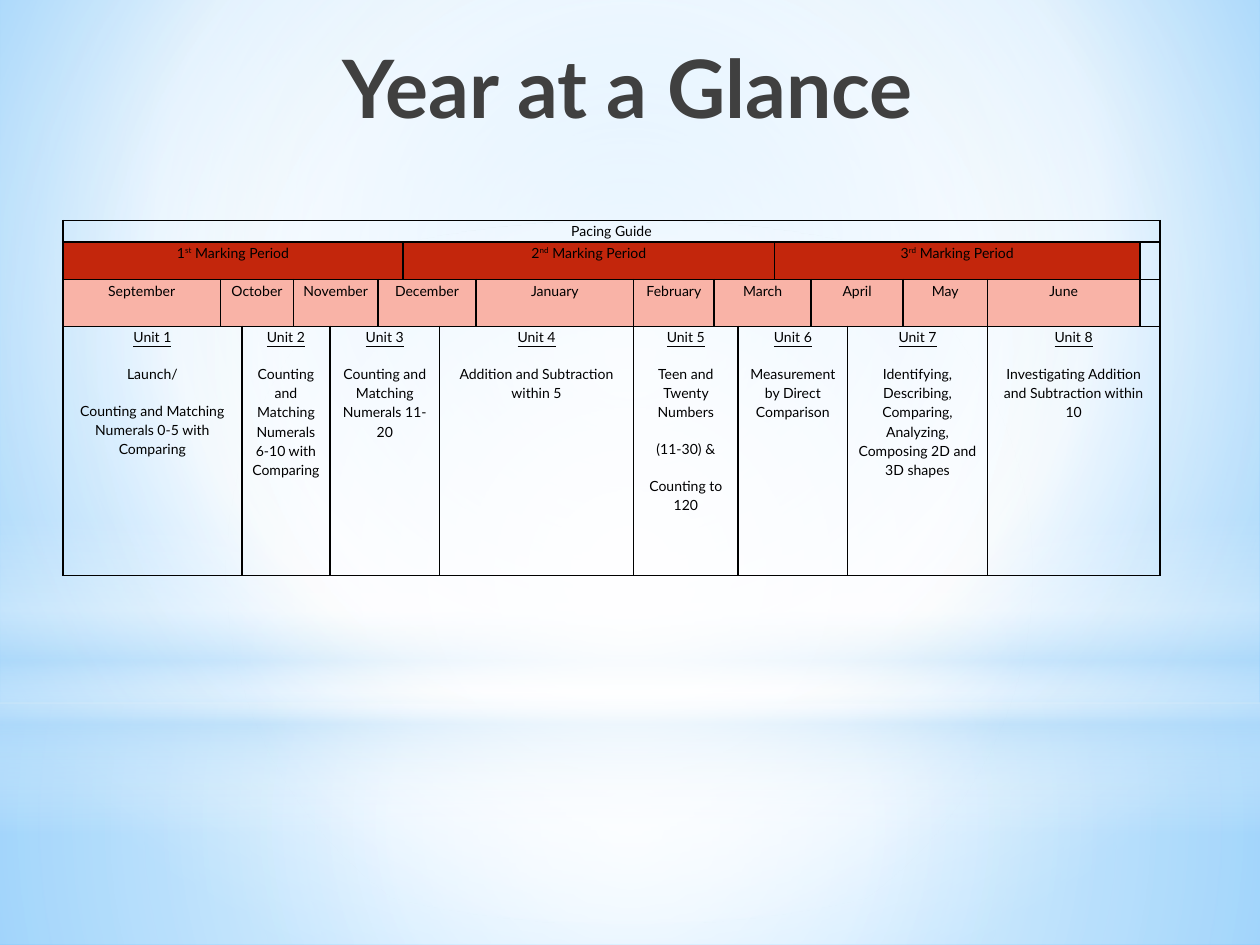
"""Build the "Year at a Glance" slide with its pacing guide table."""
from lxml.etree import SubElement
from pptx import Presentation
from pptx.dml.color import RGBColor
from pptx.enum.shapes import MSO_SHAPE as Shape
from pptx.enum.text import MSO_ANCHOR as Anchor, MSO_AUTO_SIZE as AutoSize, PP_ALIGN as Align
from pptx.oxml.ns import qn
from pptx.util import Inches, Pt


def gradient(parent, stops, center=None):
    """Replace the empty fill of parent with a radial or a vertical gradient."""
    old = parent.find(qn("a:noFill"))
    grad = SubElement(parent, qn("a:gradFill"), rotWithShape="1")
    parent.replace(old, grad)
    stop_list = SubElement(grad, qn("a:gsLst"))
    for position, color, opacity in stops:
        stop = SubElement(stop_list, qn("a:gs"), pos=str(position * 1000))
        tone = SubElement(stop, qn("a:srgbClr"), val=color)
        if opacity < 100:
            SubElement(tone, qn("a:alpha"), val=str(opacity * 1000))
    if center:
        radial = SubElement(grad, qn("a:path"), path="circle")
        sides = {side: str(share * 1000) for side, share in zip("ltrb", center)}
        SubElement(radial, qn("a:fillToRect"), sides)
    else:
        SubElement(grad, qn("a:lin"), ang="5400000", scaled="0")


def write(para, text, size, color, **style):
    """Add one centred run in the slide's font."""
    para.alignment = Align.CENTER
    span = para.add_run()
    span.text = text
    span.font.name = "Lato"
    span.font.size = Pt(size)
    span.font.color.rgb = RGBColor.from_string(color)
    for name, value in style.items():
        setattr(span.font, name, value)
    return span


WHITE, SKY, BLACK = "FFFFFF", "B4DCFA", "000000"
RED, PINK = "C3260C", "F9B3A7"
MIDDLE = (50, 50, 50, 50)

deck = Presentation()
deck.slide_width, deck.slide_height = Inches(10), Inches(7.5)
page = deck.slides.add_slide(deck.slide_layouts[5])

page.background.fill.background()
gradient(page.element.find(".//" + qn("p:bgPr")),
         [(0, "9ED5FF", 100), (60, WHITE, 100), (100, "5BB9FF", 100)], (20, 10, 20, 60))
page_fill = page.element.find(".//" + qn("p:bgPr"))
page_fill.insert(0, page_fill.find(qn("a:gradFill")))

glows = [
    (Shape.RECTANGLE, 5.58, 1.92, [(0, WHITE, 91), (37, WHITE, 76), (100, SKY, 79)], MIDDLE),
    (Shape.RECTANGLE, 0, 5.58, [(0, WHITE, 89), (48, WHITE, 62), (100, SKY, 79)], MIDDLE),
    (Shape.RECTANGLE, 4.12, 2.5, [(0, WHITE, 0), (29, WHITE, 30), (45, SKY, 40),
                                  (55, WHITE, 26), (65, SKY, 60), (100, WHITE, 0)], None),
    (Shape.OVAL, 1.75, 5.58, [(0, WHITE, 100), (56, WHITE, 0)], MIDDLE),
]
for kind, top, height, stops, center in glows:
    glow = page.shapes.add_shape(kind, 0, Inches(top), deck.slide_width, Inches(height))
    glow.shadow.inherit = False
    glow.line.fill.background()
    glow.fill.background()
    gradient(glow.element.spPr, stops, center)

title = page.shapes.title
title.left, title.top, title.width, title.height = map(Inches, (1.42, 0.25, 7.12, 1.25))
title.text_frame.auto_size = AutoSize.NONE
title.text_frame.vertical_anchor = Anchor.TOP
write(title.text_frame.paragraphs[0], "Year at a Glance", 46, "404040", bold=True)
glow.element.addnext(title.element)

columns = [1.25, 0.17, 0.41, 0.29, 0.38, 0.2, 0.29, 0.29, 1.25,
           0.64, 0.19, 0.29, 0.29, 0.29, 0.44, 0.67, 1.21, 0.15]
heights = [0.17, 0.3, 0.37, 1.98]
periods = [("1", "st", 6), ("2", "nd", 6), ("3", "rd", 5)]
months = [("September", 1), ("October", 2), ("November", 2), ("December", 3), ("January", 1),
          ("February", 1), ("March", 3), ("April", 2), ("May", 1), ("June", 1)]
units = [
    (["Launch/", "Counting and Matching Numerals 0-5 with Comparing"], 2),
    (["Counting and Matching Numerals 6-10 with Comparing"], 2),
    (["Counting and Matching Numerals 11-20"], 3),
    (["Addition and Subtraction within 5"], 2),
    (["Teen and Twenty Numbers", "(11-30) &", "Counting to 120"], 2),
    (["Measurement by Direct Comparison"], 3),
    (["Identifying, Describing, Comparing, Analyzing, Composing 2D and 3D shapes"], 2),
    (["Investigating Addition and Subtraction within 10"], 2),
]
rows = [
    [([["Pacing Guide"]], 18, None)],
    [([[number, ending, " Marking Period"]], width, RED) for number, ending, width in periods]
    + [([], 1, None)],
    [([[month]], width, PINK) for month, width in months] + [([], 1, None)],
    [([[f"Unit {number}"]] + [[topic] for topic in topics], width, None)
     for number, (topics, width) in enumerate(units, 1)],
]

table = page.shapes.add_table(len(heights), len(columns), Inches(0.5), Inches(1.75),
                              Inches(sum(columns)), Inches(sum(heights))).table
table.first_row = table.horz_banding = False
for column, width in zip(table.columns, columns):
    column.width = Inches(width)
for row, height in zip(table.rows, heights):
    row.height = Inches(height)

for cell in table.iter_cells():
    cell.margin_left = cell.margin_right = Inches(0.06)
    cell.margin_top = cell.margin_bottom = 0
    cell.text_frame.paragraphs[0].font.size = Pt(8)
    borders = cell._tc.get_or_add_tcPr()
    for side in ("lnL", "lnR", "lnT", "lnB"):
        line = SubElement(borders, qn(f"a:{side}"), w=str(Pt(1)))
        SubElement(SubElement(line, qn("a:solidFill")), qn("a:srgbClr"), val=BLACK)
    cell.fill.background()

for row_index, row in enumerate(rows):
    start = 0
    for paragraphs, width, color in row:
        cell = table.cell(row_index, start)
        if width > 1:
            cell.merge(table.cell(row_index, start + width - 1))
        start += width
        if color:
            cell.fill.solid()
            cell.fill.fore_color.rgb = RGBColor.from_string(color)
        frame = cell.text_frame
        for index, pieces in enumerate(paragraphs):
            para = frame.add_paragraph() if index else frame.paragraphs[0]
            para.line_spacing, para.space_after = 1.15, Pt(10)
            for place, piece in enumerate(pieces):
                heading = row_index == 3 and index == 0
                span = write(para, piece, 8, BLACK, underline=heading)
                if place == 1:
                    span.font._element.set("baseline", "30000")

deck.save("out.pptx")
